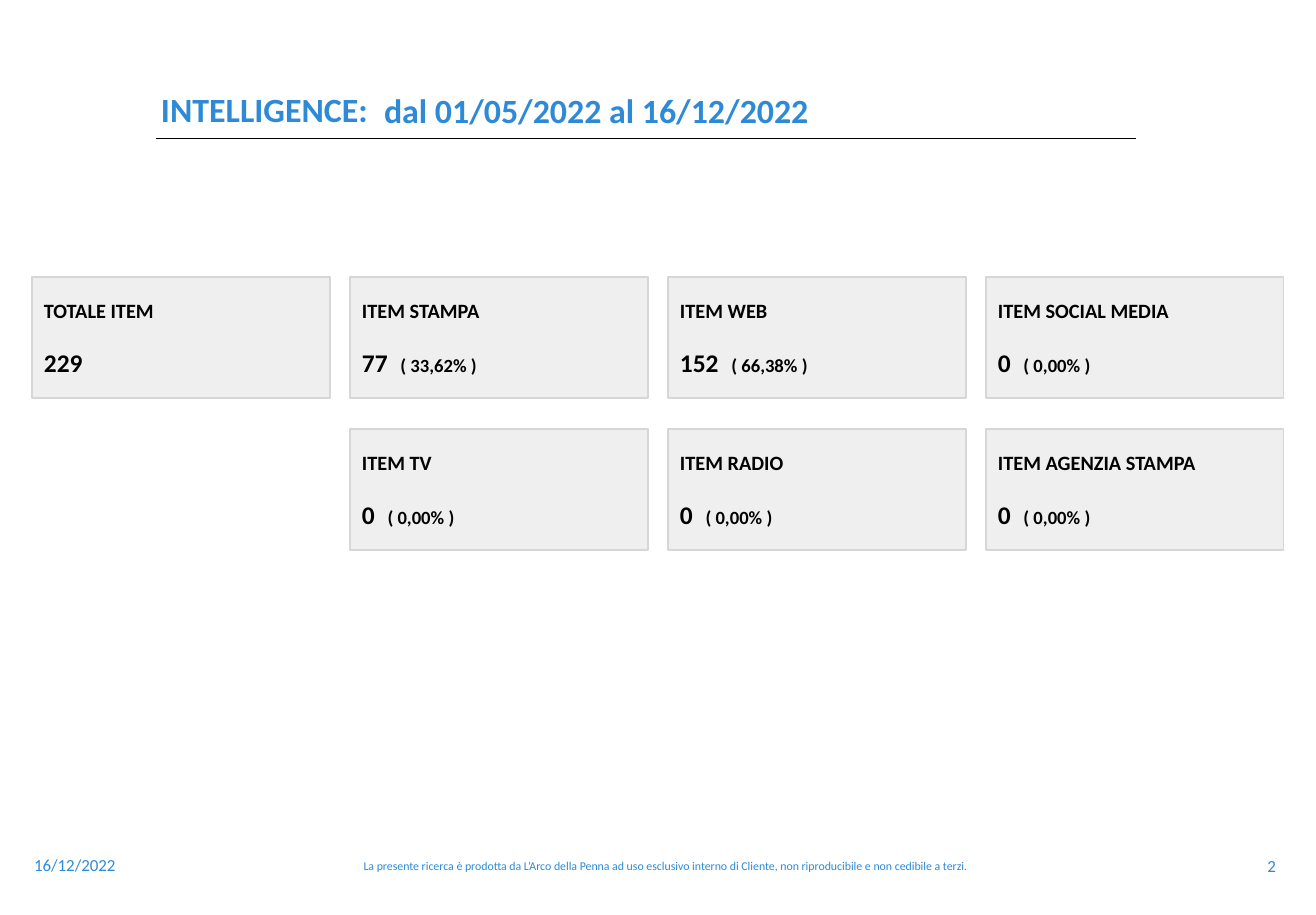
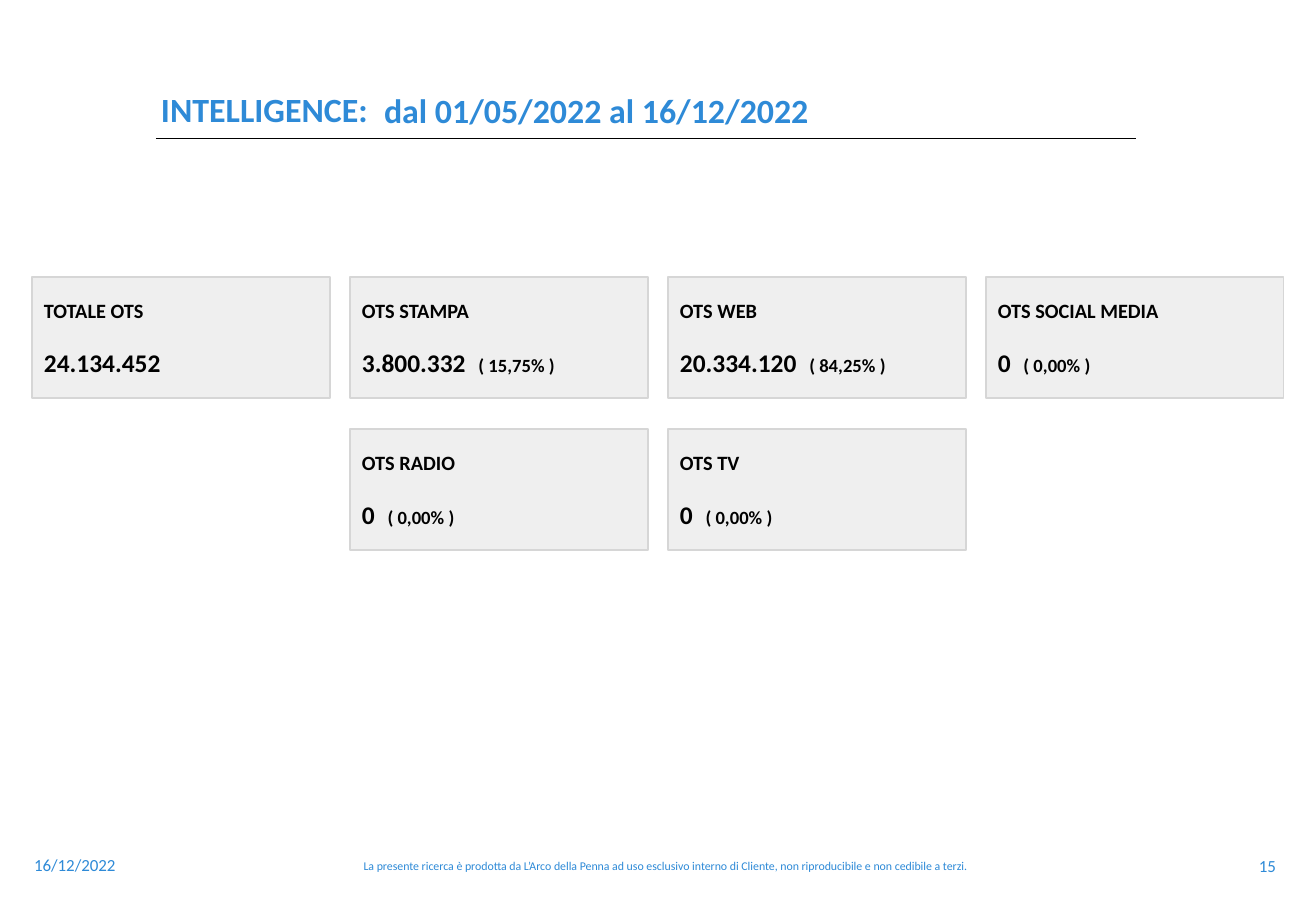
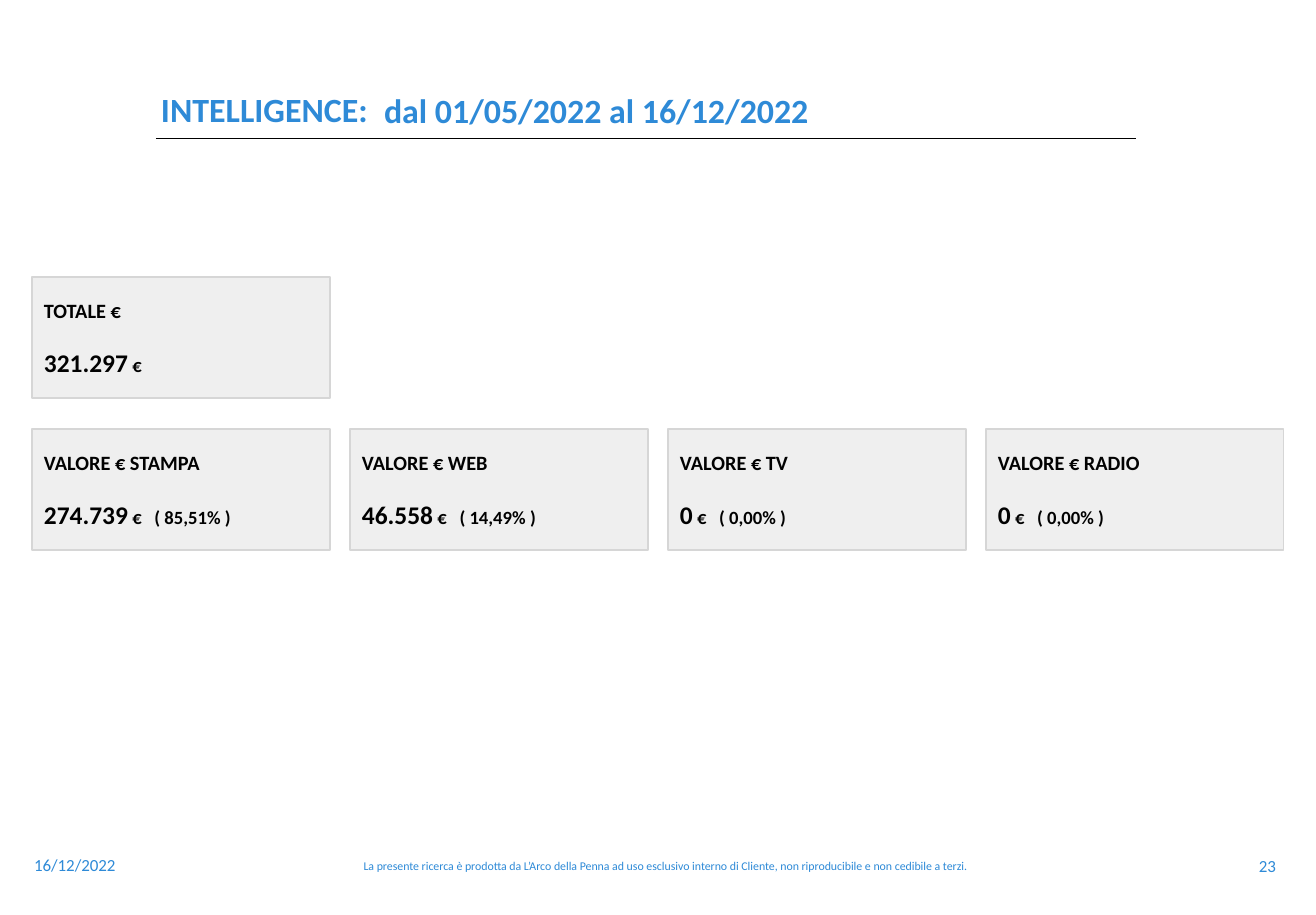
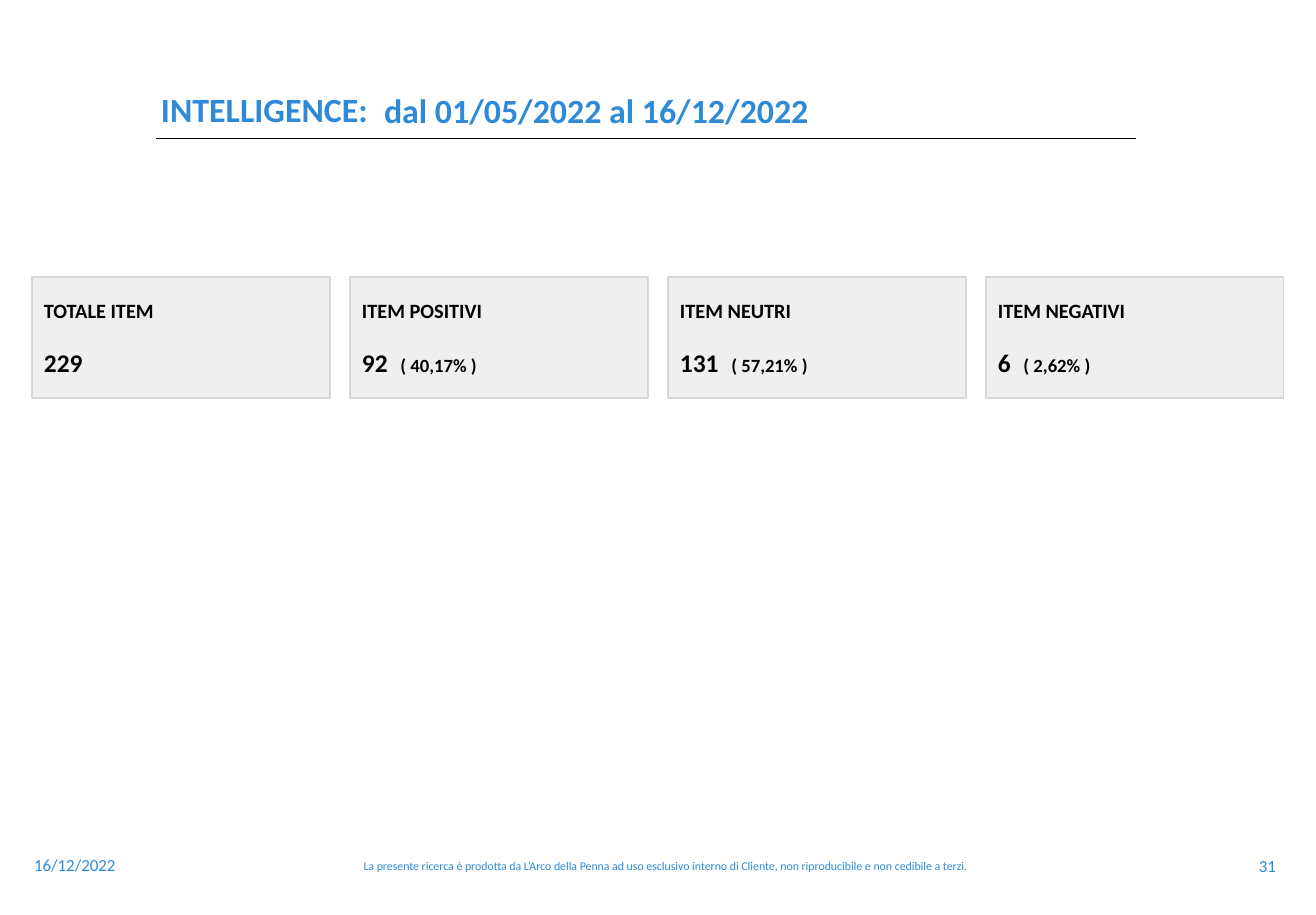
import pptx
import pptx.dml.color
import pptx.enum.shapes
import pptx.enum.text
import pptx.oxml
import pptx.util

SCALE = 914400 / 122
FONT = "Calibri"
BLUE, INK, BLACK = "2E8AD7", "010101", "000000"
FILL, EDGE = "EFEFEF", "D6D6D6"
ALIGN = pptx.enum.text.PP_ALIGN
PERIOD = "dal 01/05/2022 al 16/12/2022"
DATE = "16/12/2022"
NOTICE = ("La presente ricerca è prodotta da L’Arco della Penna ad uso esclusivo "
          "interno di Cliente, non riproducibile e non cedibile a terzi.")

# Card grid: left, top, column step, row step
LEFT, TOP, STEP, DROP = 32, 277, 318, 152
CARD = (298, 121)

# Page number, then cards as column, row, label, value, unit, share
PAGES = [
    (2, [
        (0, 0, "TOTALE ITEM", "229", "", ""),
        (1, 0, "ITEM STAMPA", "77", "", "33,62%"),
        (2, 0, "ITEM WEB", "152", "", "66,38%"),
        (3, 0, "ITEM SOCIAL MEDIA", "0", "", "0,00%"),
        (1, 1, "ITEM TV", "0", "", "0,00%"),
        (2, 1, "ITEM RADIO", "0", "", "0,00%"),
        (3, 1, "ITEM AGENZIA STAMPA", "0", "", "0,00%"),
    ]),
    (15, [
        (0, 0, "TOTALE OTS", "24.134.452", "", ""),
        (1, 0, "OTS STAMPA", "3.800.332", "", "15,75%"),
        (2, 0, "OTS WEB", "20.334.120", "", "84,25%"),
        (3, 0, "OTS SOCIAL MEDIA", "0", "", "0,00%"),
        (1, 1, "OTS RADIO", "0", "", "0,00%"),
        (2, 1, "OTS TV", "0", "", "0,00%"),
    ]),
    (23, [
        (0, 0, "TOTALE €", "321.297", "€", ""),
        (0, 1, "VALORE € STAMPA", "274.739", "€", "85,51%"),
        (1, 1, "VALORE € WEB", "46.558", "€", "14,49%"),
        (2, 1, "VALORE € TV", "0", "€", "0,00%"),
        (3, 1, "VALORE € RADIO", "0", "€", "0,00%"),
    ]),
    (31, [
        (0, 0, "TOTALE ITEM", "229", "", ""),
        (1, 0, "ITEM POSITIVI", "92", "", "40,17%"),
        (2, 0, "ITEM NEUTRI", "131", "", "57,21%"),
        (3, 0, "ITEM NEGATIVI", "6", "", "2,62%"),
    ]),
]


def px(n):
    return pptx.util.Emu(round(n * SCALE))


def color(code):
    return pptx.dml.color.RGBColor.from_string(code)


def style(para, size, code, bold=False, align=ALIGN.LEFT):
    para.alignment = align
    font = para.font
    font.name, font.bold = FONT, bold
    font.size = pptx.util.Pt(size)
    font.color.rgb = color(code)


def inset(frame, left, top, right, bottom):
    frame.margin_left, frame.margin_top = px(left), px(top)
    frame.margin_right, frame.margin_bottom = px(right), px(bottom)
    frame.word_wrap = True
    frame.vertical_anchor = pptx.enum.text.MSO_ANCHOR.TOP


def label(slide, box, text, size, bold=False, align=ALIGN.LEFT, pad=(0, 0)):
    frame = slide.shapes.add_textbox(*map(px, box)).text_frame
    inset(frame, *pad, *pad)
    para = frame.paragraphs[0]
    para.text = text
    style(para, size, BLUE, bold, align)


def header(slide, x, y, wide):
    label(slide, (x - 7, y, 240, 54), "INTELLIGENCE:", 20, True, pad=(12, 6))
    label(slide, (x + 216, y + 1, 711, 54), PERIOD, 20, True, pad=(12, 6))
    rule = slide.shapes.add_connector(
        pptx.enum.shapes.MSO_CONNECTOR.STRAIGHT,
        px(x), px(y + 55), px(x + wide), px(y + 55))
    rule.line.color.rgb = color(BLACK)
    rule.line.width = pptx.util.Pt(0.5)
    props = rule._element.spPr
    props.append(pptx.oxml.parse_xml(
        '<a:effectLst xmlns:a="http://schemas.openxmlformats.org/drawingml/2006/main"/>'))


def footer(slide, x, y, wide, page):
    label(slide, (x, y, 106, 43), DATE, 10)
    label(slide, (x + 302, y + 4, 659, 37), NOTICE, 7, align=ALIGN.CENTER)
    label(slide, (x + wide - 73, y - 5, 73, 37), str(page), 10,
          align=ALIGN.RIGHT, pad=(12, 6))


def piece(para, text, size, gap=0):
    """Add a run; gap is extra letter spacing in points."""
    run = para.add_run()
    run.text = text
    run.font.size = pptx.util.Pt(size)
    if gap:
        run.font._element.set("spc", str(gap * 100))


def card(slide, x, y, name, value, unit, share):
    box = slide.shapes.add_shape(
        pptx.enum.shapes.MSO_SHAPE.RECTANGLE, *map(px, (x, y, *CARD)))
    box.shadow.inherit = False
    box.fill.solid()
    box.fill.fore_color.rgb = color(FILL)
    box.line.color.rgb = color(EDGE)
    box.line.width = pptx.util.Pt(0.75)
    frame = box.text_frame
    inset(frame, 12, 21, 12, 6)
    # Label
    head = frame.paragraphs[0]
    head.text = name
    style(head, 12, INK, True)
    # Value, with unit and share where there is one
    line = frame.add_paragraph()
    style(line, 15, INK, True)
    line.space_before = pptx.util.Pt(14.65)
    piece(line, value, 15)
    if unit:
        piece(line, " " + unit, 11)
    if share:
        piece(line, " ", 11, gap=5)
        piece(line, f"( {share} )", 11)


def main():
    deck = pptx.Presentation()
    deck.slide_width, deck.slide_height = px(1316), px(915)
    for page, cards in PAGES:
        slide = deck.slides.add_slide(deck.slide_layouts[6])
        header(slide, 156, 83, 980)
        for col, row, *texts in cards:
            card(slide, LEFT + col * STEP, TOP + row * DROP, *texts)
        footer(slide, 34, 855, 1254, page)
    deck.save("out.pptx")


if __name__ == "__main__":
    main()
